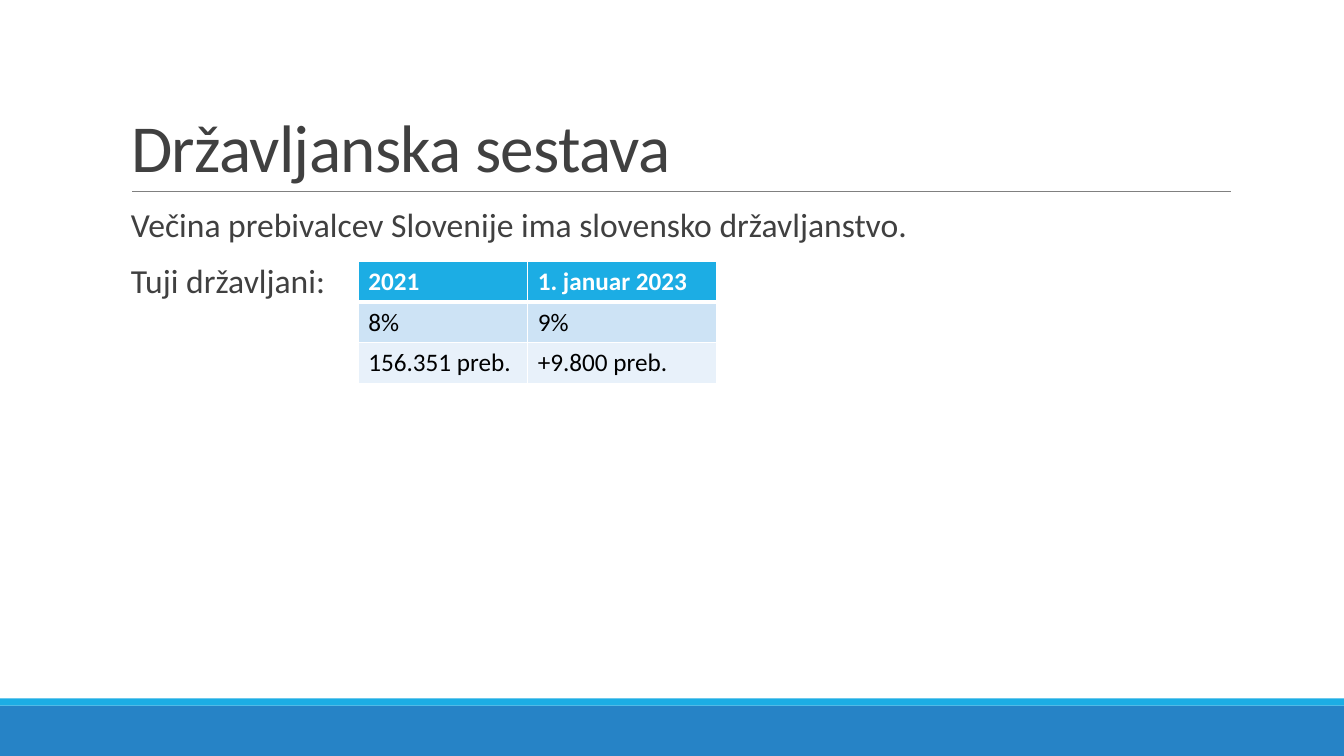
from lxml import etree
from pptx import Presentation
from pptx import util as u
from pptx.dml.color import RGBColor
from pptx.enum import shapes, text
from pptx.oxml import ns

# Colours
WHITE = RGBColor(0xFF, 0xFF, 0xFF)
BLACK = RGBColor(0, 0, 0)
INK = RGBColor(0x40, 0x40, 0x40)
RULE_GREY = RGBColor(0x80, 0x80, 0x80)
SKY = RGBColor(0x1C, 0xAD, 0xE4)
BLUE = RGBColor(0x26, 0x83, 0xC6)
BAND_DARK = RGBColor(0xCD, 0xE3, 0xF5)
BAND_LIGHT = RGBColor(0xE8, 0xF1, 0xFA)

PAGE_WIDTH, PAGE_HEIGHT = 33.87, 19.05


def apply(target, values):
    for name, value in values.items():
        setattr(target, name, value)


class SlideBuilder:
    font = "Calibri"

    def __init__(self, deck):
        self.page = deck.slides.add_slide(deck.slide_layouts[1])

    def add_span(self, para, words, size, color, bold=False):
        span = para.add_run()
        span.text = words
        apply(span.font, {"name": self.font, "size": u.Pt(size), "bold": bold})
        span.font.color.rgb = color
        return span

    def place(self, box, left, top, width, height):
        apply(box, {"left": u.Cm(left), "top": u.Cm(top),
                    "width": u.Cm(width), "height": u.Cm(height)})

    def title(self, words, *frame):
        box = self.page.shapes.title
        self.place(box, *frame)
        apply(box.text_frame, {"vertical_anchor": text.MSO_ANCHOR.BOTTOM,
                               "auto_size": text.MSO_AUTO_SIZE.NONE})
        para = box.text_frame.paragraphs[0]
        apply(para, {"alignment": text.PP_ALIGN.LEFT, "line_spacing": 0.85})
        span = self.add_span(para, words, 48, INK)
        span.font._element.set("spc", "-50")

    def body(self, lines, *frame):
        box = self.page.placeholders[1]
        self.place(box, *frame)
        apply(box.text_frame, {"margin_left": 0, "margin_right": 0,
                               "vertical_anchor": text.MSO_ANCHOR.TOP,
                               "auto_size": text.MSO_AUTO_SIZE.NONE})
        for index, words in enumerate(lines):
            para = box.text_frame.add_paragraph() if index else box.text_frame.paragraphs[0]
            apply(para, {"line_spacing": 0.9, "space_before": u.Pt(12),
                         "space_after": u.Pt(2)})
            properties = para._p.get_or_add_pPr()
            properties.set("marL", str(u.Cm(0.25)))
            properties.set("indent", "0")
            etree.SubElement(properties, ns.qn("a:buNone"))
            self.add_span(para, words, 24, INK)

    def bar(self, color, top, height):
        box = self.page.shapes.add_shape(shapes.MSO_SHAPE.RECTANGLE, 0, u.Cm(top),
                                         u.Cm(PAGE_WIDTH), u.Cm(height))
        box.shadow.inherit = False
        box.fill.solid()
        box.fill.fore_color.rgb = color
        box.line.fill.background()

    def rule(self, left, right, top):
        line = self.page.shapes.add_connector(shapes.MSO_CONNECTOR.STRAIGHT, u.Cm(left),
                                              u.Cm(top), u.Cm(right), u.Cm(top))
        line.line.color.rgb = RULE_GREY
        line.line.width = u.Pt(0.5)
        etree.SubElement(line._element.spPr, ns.qn("a:effectLst"))

    def borders(self, cell, widths):
        properties = cell._tc.get_or_add_tcPr()
        for index, (side, width) in enumerate(widths.items()):
            edge = etree.Element(ns.qn(f"a:ln{side}"), w=str(u.Pt(width)))
            fill = etree.SubElement(edge, ns.qn("a:solidFill"))
            etree.SubElement(fill, ns.qn("a:srgbClr"), val=str(WHITE))
            properties.insert(index, edge)

    def table(self, rows, left, top, widths, row_height):
        frame = self.page.shapes.add_table(len(rows), len(widths), u.Cm(left), u.Cm(top),
                                           u.Cm(sum(widths)), u.Cm(row_height * len(rows)))
        grid = frame.table
        apply(grid, {"first_row": False, "horz_banding": False})
        for column, width in zip(grid.columns, widths):
            column.width = u.Cm(width)
        fills = [SKY, BAND_DARK, BAND_LIGHT]
        for r, row in enumerate(rows):
            header = r == 0
            for c, words in enumerate(row):
                cell = grid.cell(r, c)
                cell.fill.solid()
                cell.fill.fore_color.rgb = fills[r]
                self.borders(cell, {"L": 1, "R": 1, "T": 3 if r == 1 else 1,
                                    "B": 3 if header else 1})
                self.add_span(cell.text_frame.paragraphs[0], words, 18,
                              WHITE if header else BLACK, header)


def main():
    deck = Presentation()
    apply(deck, {"slide_width": u.Cm(PAGE_WIDTH), "slide_height": u.Cm(PAGE_HEIGHT)})
    page = SlideBuilder(deck)

    # Footer bars and title rule
    page.bar(BLUE, 17.78, 1.27)
    page.bar(SKY, 17.6, 0.18)
    page.rule(3.33, 31.01, 4.83)

    # Title and body
    page.title("Državljanska sestava", 3.05, 0.79, 27.94, 4.04)
    page.body(["Večina prebivalcev Slovenije ima slovensko državljanstvo.",
               "Tuji državljani:"], 3.05, 5.13, 27.94, 12.17)

    # Foreign citizens by year
    page.table([["2021", "1. januar 2023"],
                ["8%", "9%"],
                ["156.351 preb.", "+9.800 preb."]], 9.03, 6.58, [4.27, 4.75], 1.02)

    deck.save("out.pptx")


if __name__ == "__main__":
    main()
